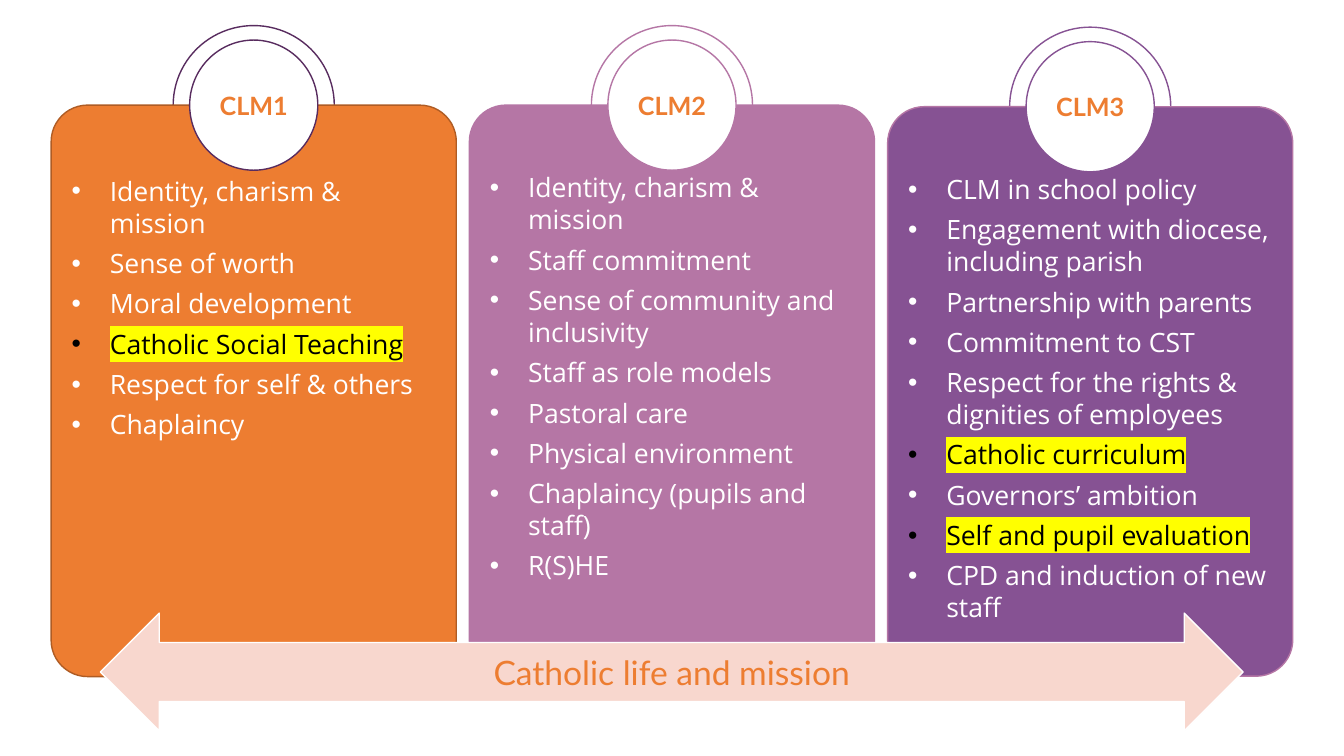
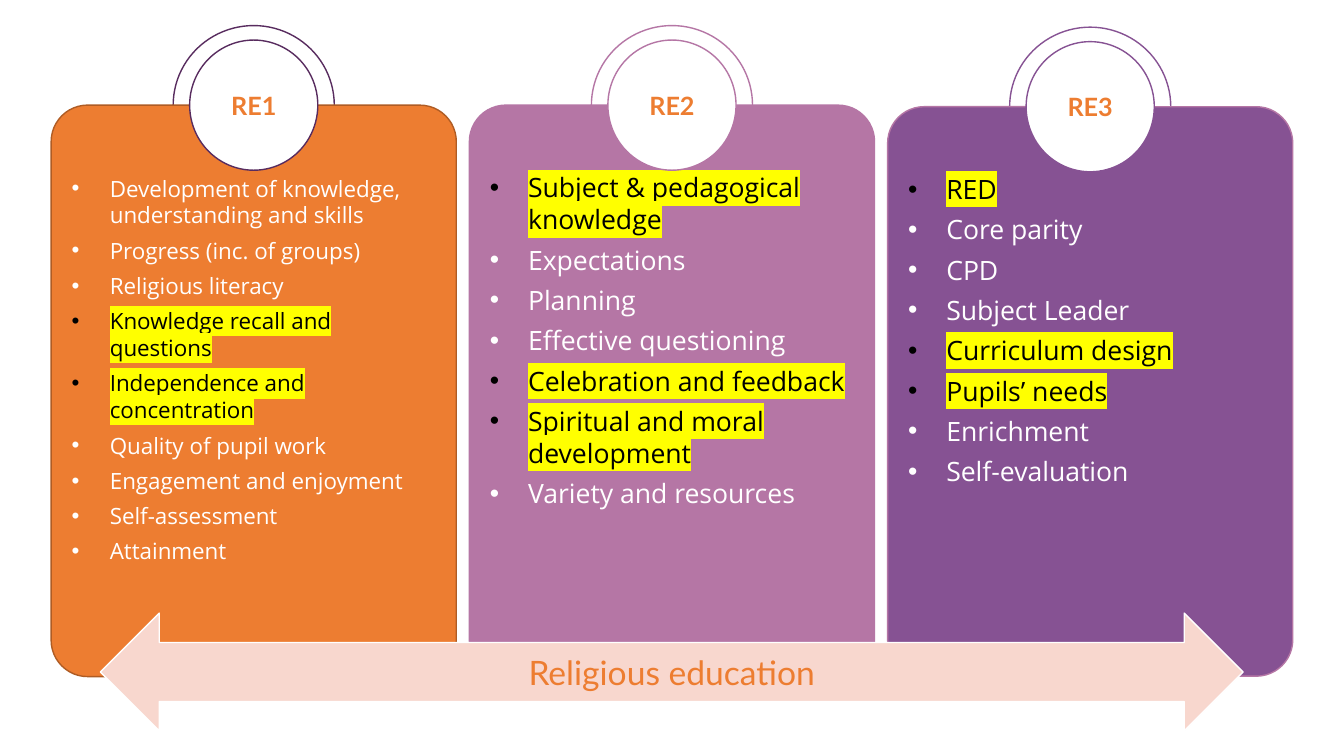
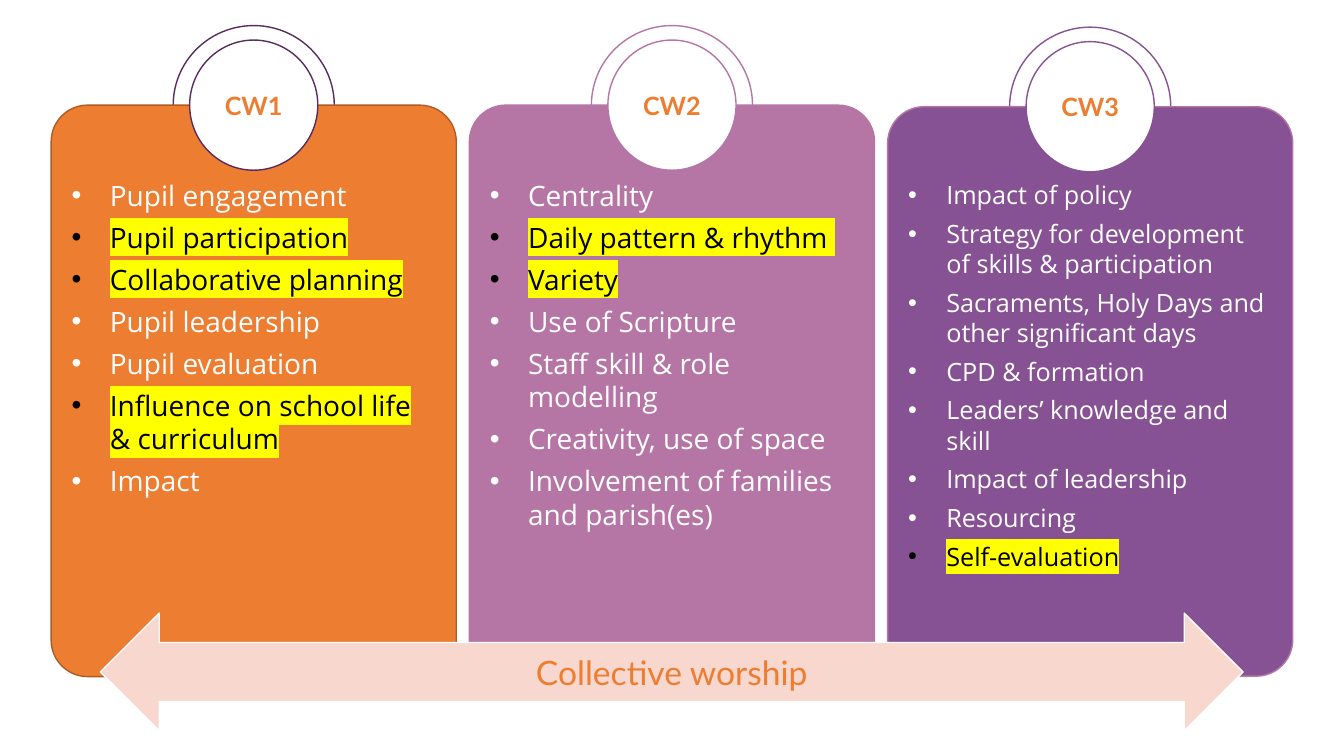
from dataclasses import dataclass

from lxml import etree
from pptx import Presentation
from pptx import util as u
from pptx.dml import color as c
from pptx.enum import shapes as s, text as t
from pptx.oxml import ns


@dataclass(frozen=True)
class Theme:
    white: str = "FFFFFF"
    black: str = "000000"
    mark: str = "FFFF00"
    orange: str = "ED7D31"
    rust: str = "AF5C24"
    plum: str = "582C5F"
    mauve: str = "B576A5"
    violet: str = "865293"
    blush: str = "F8D7CE"
    head: str = "Lato"
    body: str = "Open Sans"
    badge: int = 18
    banner: int = 24
    stroke: int = 1
    after: int = 6
    leading: float = 1.0


@dataclass(frozen=True)
class Box:
    x: float
    y: float
    w: float
    h: float


T = Theme()
LEFT, PITCH, WIDTH = 1.29, 10.54, 10.21
STYLES = [
    (2.65, 14.4, T.orange, T.rust, T.plum),
    (2.65, 14.4, T.mauve, T.mauve, T.mauve),
    (2.69, 14.35, T.violet, T.mauve, T.violet),
]
BANNER = Box(2.53, 15.45, 28.8, 2.97)
RING, BADGE = (4.06, 4.01), (3.23, 3.28)

DECK = [
    ("Catholic life and mission", "CLM", [
        (19, 22, ["Identity, charism & mission", "Sense of worth",
                  "Moral development", "*Catholic Social Teaching",
                  "Respect for self & others", "Chaplaincy"]),
        (19, 20, ["Identity, charism & mission", "Staff commitment",
                  "Sense of community and inclusivity",
                  "Staff as role models", "Pastoral care",
                  "Physical environment", "Chaplaincy (pupils and staff)",
                  "R(S)HE"]),
        (19, 20, ["CLM in school policy",
                  "Engagement with diocese, including parish",
                  "Partnership with parents", "Commitment to CST",
                  "Respect for the rights & dignities of employees",
                  "*Catholic curriculum", "Governors’ ambition",
                  "*Self and pupil evaluation",
                  "CPD and induction of new staff"]),
    ]),
    ("Religious education", "RE", [
        (16, 22, ["Development of knowledge, understanding and skills",
                  "Progress (inc. of groups)", "Religious literacy",
                  "*Knowledge recall and questions",
                  "*Independence and concentration",
                  "Quality of pupil work", "Engagement and enjoyment",
                  "Self-assessment", "Attainment"]),
        (19, 20, ["*Subject & pedagogical knowledge", "Expectations",
                  "Planning", "Effective questioning",
                  "*Celebration and feedback",
                  "*Spiritual and moral development",
                  "Variety and resources"]),
        (19, 20, ["*RED", "Core parity", "CPD", "Subject Leader",
                  "*Curriculum design", "*Pupils’ needs", "Enrichment",
                  "Self-evaluation"]),
    ]),
    ("Collective worship", "CW", [
        (20, 24, ["Pupil engagement", "*Pupil participation",
                  "*Collaborative planning", "Pupil leadership",
                  "Pupil evaluation",
                  "*Influence on school life & curriculum", "Impact"]),
        (20, 24, ["Centrality", "*Daily pattern & rhythm ", "*Variety",
                  "Use of Scripture", "Staff skill & role modelling",
                  "Creativity, use of space",
                  "Involvement of families and parish(es)"]),
        (18, 24, ["Impact of policy",
                  "Strategy for development of skills & participation",
                  "Sacraments, Holy Days and other significant days",
                  "CPD & formation", "Leaders’ knowledge and skill",
                  "Impact of leadership", "Resourcing",
                  "*Self-evaluation"]),
    ]),
]


def rgb(tone):
    return c.RGBColor.from_string(tone)


def shape(slide, kind, box, fill, line):
    item = slide.shapes.add_shape(
        kind, u.Cm(box.x), u.Cm(box.y), u.Cm(box.w), u.Cm(box.h))
    item.shadow.inherit = False
    if fill:
        item.fill.solid()
        item.fill.fore_color.rgb = rgb(fill)
    else:
        item.fill.background()
    item.line.color.rgb = rgb(line)
    item.line.width = u.Pt(T.stroke)
    return item


def style(font, name, size, tone, bold=False):
    font.name = name
    font.size = u.Pt(size)
    font.bold = bold
    font.color.rgb = rgb(tone)


def label(item, words, size, bold=False):
    frame = item.text_frame
    frame.text = words
    frame.vertical_anchor = t.MSO_ANCHOR.MIDDLE
    para = frame.paragraphs[0]
    para.alignment = t.PP_ALIGN.CENTER
    style(para.runs[0].font, T.head, size, T.orange, bold)


def bullet(para):
    props = para._p.get_or_add_pPr()
    props.set("marL", str(u.Cm(0.96)))
    props.set("indent", str(-u.Cm(0.96)))
    face = etree.SubElement(props, ns.qn("a:buFont"))
    face.set("typeface", "Arial")
    etree.SubElement(props, ns.qn("a:buChar")).set("char", "•")


def mark(run):
    fill = run._r.rPr.find(ns.qn("a:solidFill"))
    light = etree.Element(ns.qn("a:highlight"))
    etree.SubElement(light, ns.qn("a:srgbClr")).set("val", T.mark)
    fill.addnext(light)


def points(item, size, lead, lines):
    frame = item.text_frame
    frame.word_wrap = True
    frame.vertical_anchor = t.MSO_ANCHOR.TOP
    frame.margin_top = u.Cm(0.13) + u.Pt(12 + lead * 1.2)
    frame.text = "\n".join(line.lstrip("*") for line in lines)
    for para, line in zip(frame.paragraphs, lines):
        para.alignment = t.PP_ALIGN.LEFT
        para.line_spacing = T.leading
        para.space_after = u.Pt(T.after)
        bullet(para)
        run = para.runs[0]
        key = line.startswith("*")
        style(run.font, T.body, size, T.black if key else T.white)
        if key:
            mark(run)


def disc(slide, box, size, fill, line):
    wide, high = size
    spot = Box(box.x + (box.w - wide) / 2, box.y - high / 2, wide, high)
    return shape(slide, s.MSO_SHAPE.OVAL, spot, fill, line)


def card(slide, box, tones, code, size, lead, lines):
    fill, edge, rim = tones
    disc(slide, box, RING, None, rim)
    panel = shape(slide, s.MSO_SHAPE.ROUNDED_RECTANGLE, box, fill, edge)
    panel.adjustments[0] = 0.09
    points(panel, size, lead, lines)
    label(disc(slide, box, BADGE, T.white, rim), code, T.badge, True)


def banner(slide, box, words):
    arrow = shape(slide, s.MSO_SHAPE.LEFT_RIGHT_ARROW, box, T.blush, T.white)
    label(arrow, words, T.banner)


def page(deck, title, code, cards):
    slide = deck.slides.add_slide(deck.slide_layouts[6])
    for i, (look, body) in enumerate(zip(STYLES, cards)):
        top, high, *tones = look
        box = Box(LEFT + i * PITCH, top, WIDTH, high)
        card(slide, box, tones, f"{code}{i + 1}", *body)
    banner(slide, BANNER, title)


def main():
    deck = Presentation()
    deck.slide_width, deck.slide_height = u.Cm(33.87), u.Cm(19.05)
    for title, code, cards in DECK:
        page(deck, title, code, cards)
    deck.save("out.pptx")


if __name__ == "__main__":
    main()
